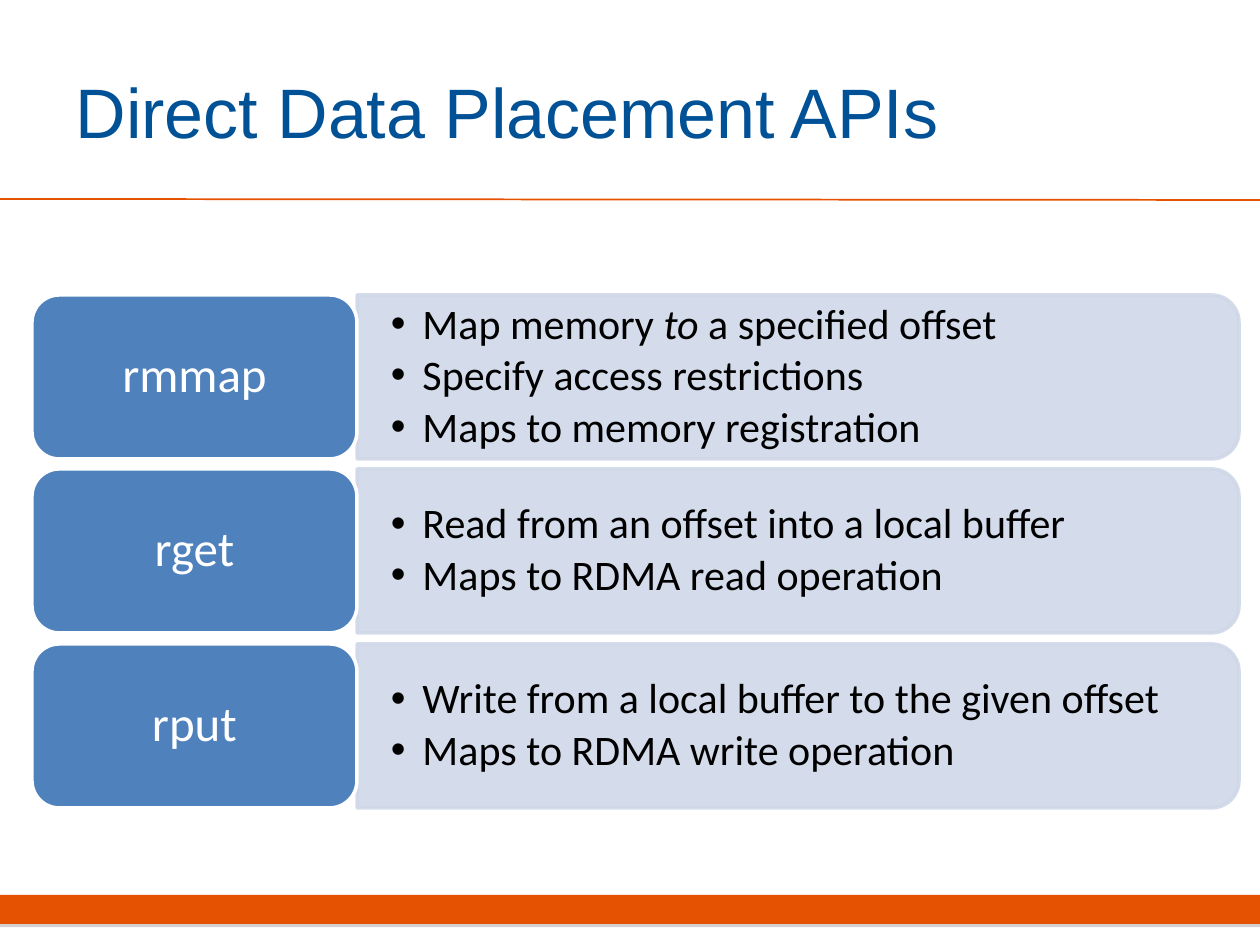
from dataclasses import dataclass

from lxml import etree
from pptx import Presentation
from pptx import util as u
from pptx.dml.color import RGBColor
from pptx.enum import shapes, text
from pptx.oxml import ns


@dataclass(frozen=True)
class Theme:
    title_font: str = "Arial"
    body_font: str = "Calibri"
    title_size: int = 40
    tab_size: int = 28
    bullet_size: int = 24
    title: str = "005195"
    accent: str = "E55302"
    tab: str = "4F81BD"
    panel: str = "D0D8E8"
    shade: str = "808080"
    light: str = "FFFFFF"
    dark: str = "000000"


def px(length):
    return u.Emu(round(length * 914400 / 126))


def child(parent, tag, **attributes):
    return etree.SubElement(parent, ns.qn(tag), attributes)


class Deck:
    def __init__(self, theme):
        self.theme = theme
        self.prs = Presentation()
        self.prs.slide_width, self.prs.slide_height = px(1260), px(945)
        self.slide = self.prs.slides.add_slide(self.prs.slide_layouts[5])

    def add_run(self, paragraph, words, font, size, color, italic=None):
        run = paragraph.add_run()
        run.text = words
        run.font.name, run.font.size = font, u.Pt(size)
        run.font.color.rgb = RGBColor.from_string(color)
        run.font.italic = italic

    def title(self, words, x, y, w, h):
        title = self.slide.shapes.title
        title.left, title.top, title.width, title.height = map(px, (x, y, w, h))
        title.text_frame.vertical_anchor = text.MSO_ANCHOR.MIDDLE
        paragraph = title.text_frame.paragraphs[0]
        paragraph.alignment = text.PP_ALIGN.LEFT
        self.add_run(paragraph, words, self.theme.title_font, self.theme.title_size, self.theme.title)

    def block(self, preset, x, y, w, h, fill, outline=None):
        block = self.slide.shapes.add_shape(preset, *map(px, (x, y, w, h)))
        block.shadow.inherit = False
        block.fill.solid()
        block.fill.fore_color.rgb = RGBColor.from_string(fill)
        if outline:
            block.line.color.rgb = RGBColor.from_string(outline)
            block.line.width = u.Pt(2)
        else:
            block.line.fill.background()
        return block

    def rule(self, x1, y1, x2, y2):
        rule = self.slide.shapes.add_connector(shapes.MSO_CONNECTOR.STRAIGHT, *map(px, (x1, y1, x2, y2)))
        rule.line.color.rgb = RGBColor.from_string(self.theme.accent)
        rule.line.width = u.Pt(1)
        child(rule._element.spPr, "a:effectLst")

    def footer(self, x, y, w, h):
        footer = self.block(shapes.MSO_SHAPE.RECTANGLE, x, y, w, h, self.theme.accent)
        effects = footer._element.spPr.find(ns.qn("a:effectLst"))
        shadow = child(effects, "a:outerShdw", dist=str(u.Pt(1.8)), dir="5400000", rotWithShape="0")
        child(child(shadow, "a:srgbClr", val=self.theme.shade), "a:alpha", val="35000")

    def panel(self, x, y, w, h):
        left, top = x + (w - h) // 2, y - (w - h) // 2
        panel = self.block(shapes.MSO_SHAPE.ROUND_2_SAME_RECTANGLE, left, top, h, w,
                           self.theme.panel, self.theme.panel)
        panel.rotation = 90
        for color in panel._element.spPr.iter(ns.qn("a:srgbClr")):
            child(color, "a:alpha", val="90000")

    def bullets(self, items, x, y, w, h):
        frame = self.slide.shapes.add_textbox(*map(px, (x, y, w, h))).text_frame
        frame.word_wrap = True
        frame.vertical_anchor = text.MSO_ANCHOR.MIDDLE
        frame.margin_left = frame.margin_right = px(34)
        frame.margin_top = frame.margin_bottom = px(17)
        for index, runs in enumerate(items):
            paragraph = frame.add_paragraph() if index else frame.paragraphs[0]
            paragraph.level = 1
            properties = paragraph._p.get_or_add_pPr()
            properties.set("marL", str(u.Inches(0.25)))
            properties.set("indent", str(-u.Inches(0.25)))
            child(properties, "a:buFont", typeface="Arial")
            child(properties, "a:buChar", char="•")
            paragraph.line_spacing = 0.9
            paragraph.space_after = u.Pt(self.theme.bullet_size * 0.15)
            for words, italic in runs:
                self.add_run(paragraph, words, self.theme.body_font, self.theme.bullet_size,
                             self.theme.dark, italic)

    def tab(self, name, x, y, w, h):
        tab = self.block(shapes.MSO_SHAPE.ROUNDED_RECTANGLE, x, y, w, h, self.theme.tab, self.theme.light)
        tab.text_frame.vertical_anchor = text.MSO_ANCHOR.MIDDLE
        paragraph = tab.text_frame.paragraphs[0]
        paragraph.alignment = text.PP_ALIGN.CENTER
        paragraph.line_spacing = 0.9
        self.add_run(paragraph, name, self.theme.body_font, self.theme.tab_size, self.theme.light)


CALLS = {
    "rmmap": [
        [("Map memory ", None), ("to", True), (" a specified offset", None)],
        [("Specify access restrictions", None)],
        [("Maps to memory registration", None)],
    ],
    "rget": [
        [("Read from an offset into a local buffer", None)],
        [("Maps to RDMA read operation", None)],
    ],
    "rput": [
        [("Write from a local buffer to the given offset", None)],
        [("Maps to RDMA write operation", None)],
    ],
}


def main():
    deck = Deck(Theme())
    deck.footer(0, 895, 1260, 29)
    deck.rule(0, 199, 1260, 200)
    deck.title("Direct Data Placement APIs", 63, 32, 1029, 158)
    for row, (name, items) in enumerate(CALLS.items()):
        top = 295 + row * 349 // 2
        deck.panel(357, top, 882, 164)
        deck.bullets(items, 357, top + 9, 874, 146)
        deck.tab(name, 32, top, 325, 164)
    deck.prs.save("out.pptx")


if __name__ == "__main__":
    main()
